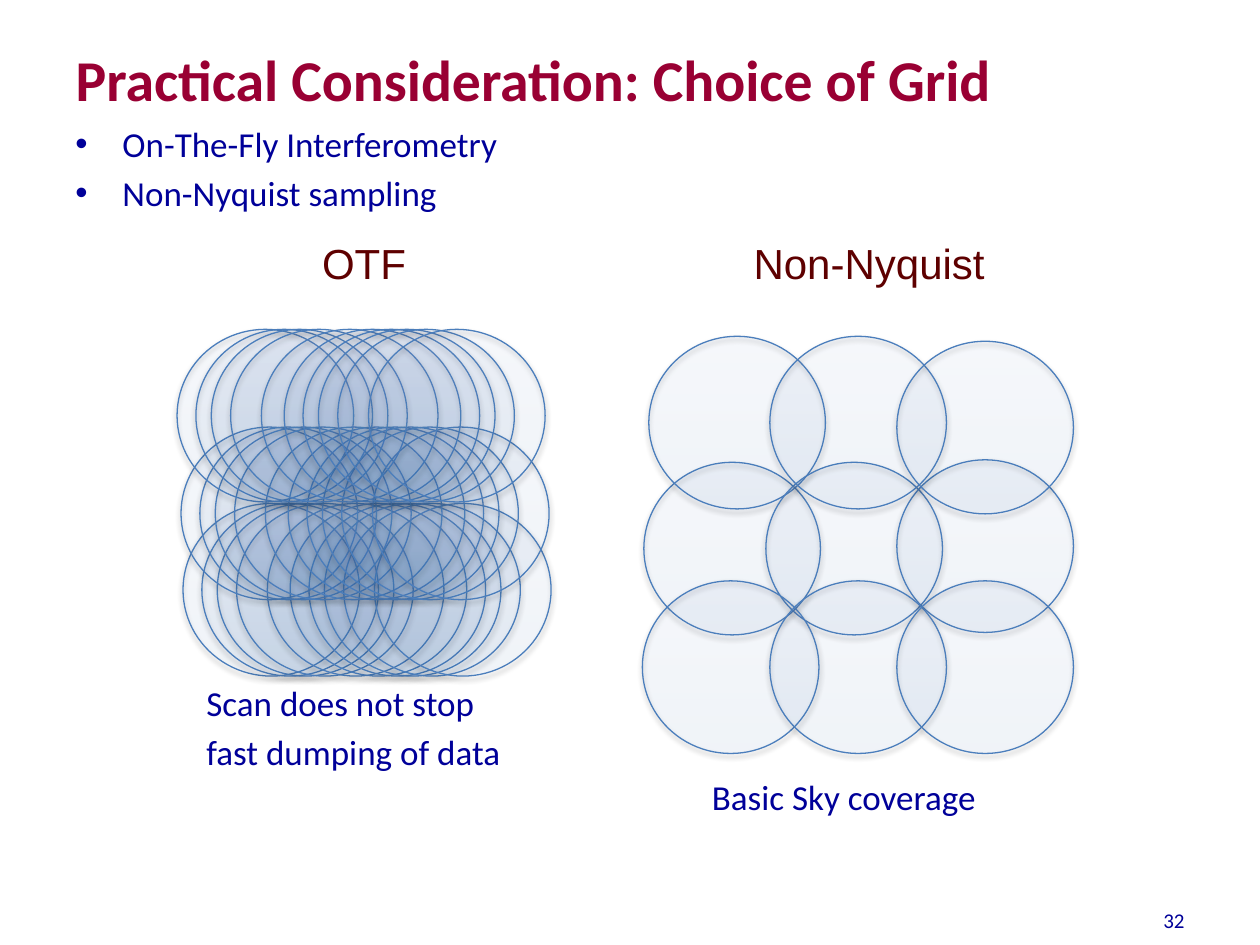
from lxml import etree
from pptx import Presentation
from pptx import util as u
from pptx.dml.color import RGBColor
from pptx.enum import shapes, text
from pptx.oxml import ns, parse_xml

THEME = {
    "title": {"name": "Calibri", "size": u.Pt(33), "bold": True, "color": "990033"},
    "body": {"name": "Calibri", "size": u.Pt(20), "color": "000099"},
    "heading": {"name": "Arial", "size": u.Pt(24), "color": "5E0000"},
    "number": {"name": "Calibri", "size": u.Pt(12), "color": "000099"},
    "beam": {"fill": ("3F80CE", "A4C4FF"), "line": "4B7EBC", "opacity": 5},
}
BEAM_W, BEAM_H = 3.56, 3.48
A = ns.nsdecls("a")


def write(box, lines, style, align=text.PP_ALIGN.LEFT, anchor=text.MSO_ANCHOR.TOP, bullets=False):
    frame = box.text_frame
    frame.text = "\n".join(lines)
    frame_format = {"word_wrap": True, "auto_size": text.MSO_AUTO_SIZE.NONE, "vertical_anchor": anchor}
    for key, value in frame_format.items():
        setattr(frame, key, value)
    for row, paragraph in enumerate(frame.paragraphs):
        paragraph.alignment = align
        paragraph.space_before = u.Pt(4 if row else 0)
        if bullets:
            props = paragraph._p.get_or_add_pPr()
            props.set("marL", str(u.Cm(0.95)))
            props.set("indent", str(u.Cm(-0.95)))
            props.append(parse_xml(f'<a:buFont {A} typeface="Arial"/>'))
            props.append(parse_xml(f'<a:buChar {A} char="•"/>'))
        for key, value in THEME[style].items():
            if key == "color":
                paragraph.font.color.rgb = RGBColor.from_string(value)
            else:
                setattr(paragraph.font, key, value)


def add_beam(parent, left, top):
    look = THEME["beam"]
    beam = parent.add_shape(shapes.MSO_SHAPE.OVAL, u.Cm(left), u.Cm(top), u.Cm(BEAM_W), u.Cm(BEAM_H))
    beam.fill.gradient()
    beam.fill.gradient_angle = 90
    for stop, color in zip(beam.fill.gradient_stops, look["fill"]):
        stop.color.rgb = RGBColor.from_string(color)
    for color in beam._element.spPr.iter(ns.qn("a:srgbClr")):
        etree.SubElement(color, ns.qn("a:alpha"), val=str(look["opacity"] * 1000))
    beam.line.color.rgb = RGBColor.from_string(look["line"])
    beam.line.width = u.Pt(0.75)
    # Soft shadow straight below the beam
    beam.shadow.inherit = False
    beam._element.spPr.find(ns.qn("a:effectLst")).append(parse_xml(
        f'<a:outerShdw {A} blurRad="{u.Pt(3.1)}" dist="{u.Pt(1.8)}" dir="5400000" rotWithShape="0">'
        '<a:srgbClr val="000000"><a:alpha val="35000"/></a:srgbClr></a:outerShdw>'))


deck = Presentation()
deck.slide_width, deck.slide_height = u.Cm(25.4), u.Cm(19.05)
slide = deck.slides.add_slide(deck.slide_layouts[5])

# Title
title = slide.shapes.title
for side, length in {"left": 1.27, "top": 0.76, "width": 22.86, "height": 3.17}.items():
    setattr(title, side, u.Cm(length))
write(title, ["Practical Consideration: Choice of Grid"], "title")

# Topics, panel headings, captions and page number: place, lines, style, options
center = {"align": text.PP_ALIGN.CENTER}
passages = [
    ((1.27, 2.34, 22.86, 2.3), ["On-The-Fly Interferometry", "Non-Nyquist sampling"], "body", {"bullets": True}),
    ((2.49, 4.67, 9.7, 1.27), ["OTF"], "heading", center),
    ((12.67, 4.67, 9.7, 1.27), ["Non-Nyquist"], "heading", center),
    ((3.91, 13.62, 8.5, 2.3), ["Scan does not stop", "fast dumping of data"], "body", {}),
    ((14.1, 15.5, 8.5, 1.2), ["Basic Sky coverage"], "body", {}),
    ((22.86, 18.03, 1.27, 1.02), ["32"], "number",
     {"align": text.PP_ALIGN.RIGHT, "anchor": text.MSO_ANCHOR.MIDDLE}),
]
for place, lines, style, options in passages:
    write(slide.shapes.add_textbox(*map(u.Cm, place)), lines, style, **options)

# Non-Nyquist: loose three by three grid, listed from back to front
sparse_beams = [
    (12.98, 9.32), (13.08, 6.78), (15.44, 9.32),
    (12.95, 11.71), (18.08, 9.27), (15.52, 6.78),
    (15.52, 11.71), (18.08, 6.88), (18.08, 11.71),
]
for left, top in sparse_beams:
    add_beam(slide.shapes, left, top)

# OTF: three scan rows from the bottom up, each made of two runs of five beams
scan_rows = [(3.69, 10.15), (3.65, 8.61), (3.57, 6.64)]
run_starts = (0, 2.16)
beam_steps = (0, 0.38, 0.69, 1.08, 1.7)
for row_left, row_top in scan_rows:
    for start in run_starts:
        run = slide.shapes.add_group_shape()
        for step in beam_steps:
            add_beam(run.shapes, row_left + start + step, row_top)

deck.save("out.pptx")
